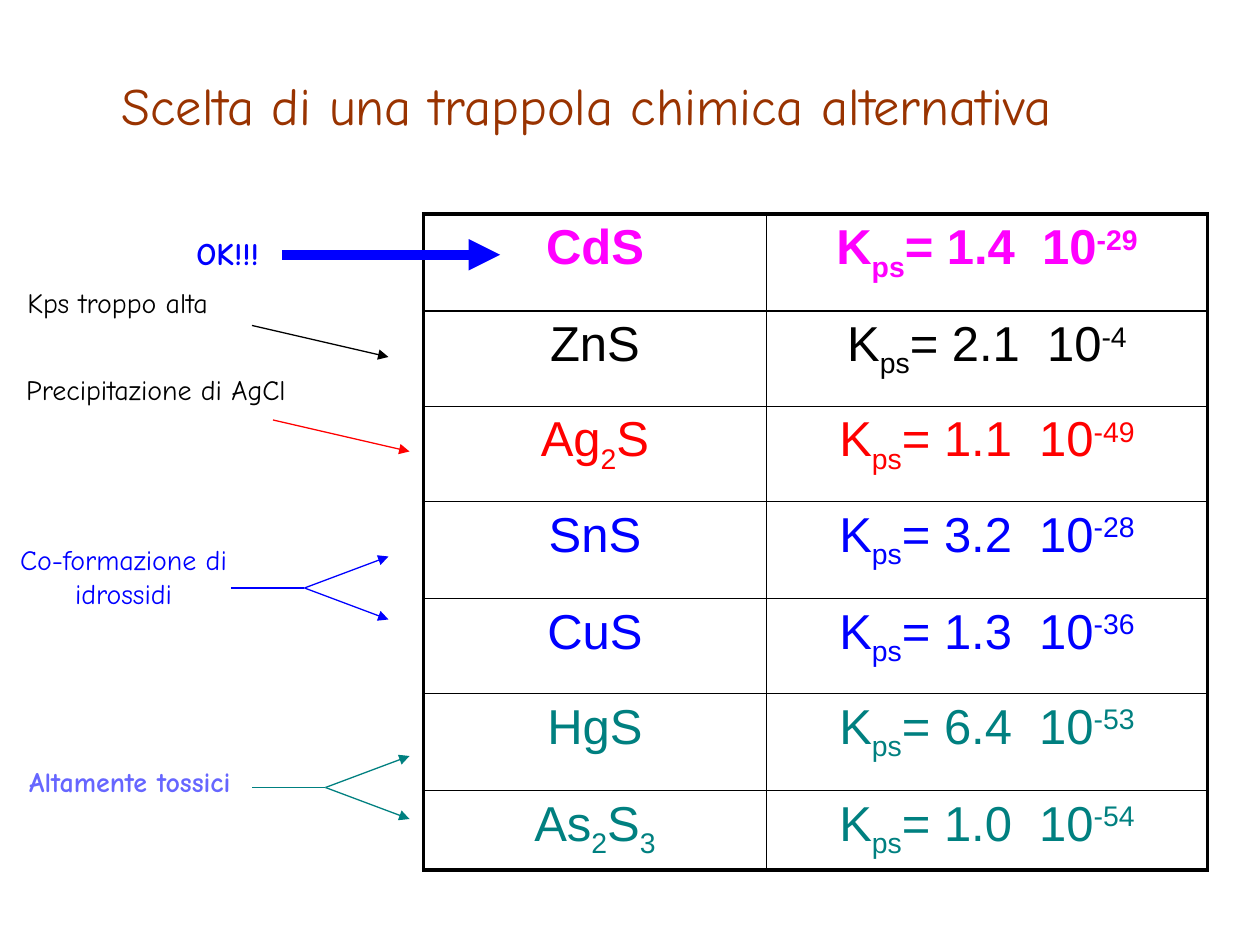
from lxml import etree
from pptx import Presentation
from pptx.dml.color import RGBColor
from pptx.enum.shapes import MSO_CONNECTOR as Link
from pptx.enum.text import MSO_ANCHOR as Anchor, MSO_AUTO_SIZE as Auto, PP_ALIGN as Align
from pptx.oxml.ns import qn
from pptx.util import Pt

BLACK = RGBColor(0x00, 0x00, 0x00)
BROWN = RGBColor(0x99, 0x33, 0x00)
PINK = RGBColor(0xFF, 0x00, 0xFF)
RED = RGBColor(0xFF, 0x00, 0x00)
BLUE = RGBColor(0x00, 0x00, 0xFF)
TEAL = RGBColor(0x00, 0x80, 0x80)
LILAC = RGBColor(0x66, 0x66, 0xFF)
HAND = "Comic Neue"


def write(par, parts, color, align, **style):
    par.alignment = align
    for text, base in parts:
        run = par.add_run()
        run.text = text
        for key, value in style.items():
            setattr(run.font, key, value)
        run.font.color.rgb = color
        if base:
            run._r.get_or_add_rPr().set("baseline", str(base * 1000))


def draw(start, end, color, width=0.75, arrow=True):
    line = slide.shapes.add_connector(Link.STRAIGHT, *map(Pt, start + end))
    line.line.color.rgb = color
    line.line.width = Pt(width)
    if arrow:
        etree.SubElement(line.line._get_or_add_ln(), qn("a:tailEnd"), type="triangle")
    etree.SubElement(line._element.spPr, qn("a:effectLst"))


deck = Presentation()
deck.slide_width, deck.slide_height = Pt(720), Pt(540)
slide = deck.slides.add_slide(deck.slide_layouts[5])

title = slide.shapes.title
place = {"left": 52.5, "top": 37.5, "width": 631.5, "height": 44}
for key, value in place.items():
    setattr(title, key, Pt(value))
frame = title.text_frame
form = {"auto_size": Auto.NONE, "word_wrap": True,
        "vertical_anchor": Anchor.MIDDLE, "margin_left": Pt(17)}
for key, value in form.items():
    setattr(frame, key, value)
write(frame.paragraphs[0], [("Scelta di una trappola chimica alternativa", 0)],
      BROWN, Align.LEFT, size=Pt(30), name=HAND, bold=False)

salts = [
    ("CdS", "1.4", "-29", PINK),
    ("ZnS", "2.1", "-4", BLACK),
    ("Ag_2_S", "1.1", "-49", RED),
    ("SnS", "3.2", "-28", BLUE),
    ("CuS", "1.3", "-36", BLUE),
    ("HgS", "6.4", "-53", TEAL),
    ("As_2_S_3", "1.0", "-54", TEAL),
]
wide = [196, 252]
high = [55.4, 54.4, 54.4, 55.4, 54.4, 55.4, 45.4]
last = len(salts) - 1
table = slide.shapes.add_table(len(salts), 2, Pt(242), Pt(122.4),
                               Pt(sum(wide)), Pt(sum(high))).table
table.first_row = table.horz_banding = False
for col, size in zip(table.columns, wide):
    col.width = Pt(size)
for row, size in zip(table.rows, high):
    row.height = Pt(size)

for r, (salt, value, power, color) in enumerate(salts):
    name = [(part, -25 if i % 2 else 0)
            for i, part in enumerate(salt.split("_")) if part]
    kps = [("K", 0), ("ps", -25), (f"= {value}  10", 0), (power, 30)]
    for c, parts in enumerate((name, kps)):
        cell = table.cell(r, c)
        par = cell.text_frame.paragraphs[0]
        par.space_before = Pt(5.6)
        write(par, parts, color, Align.CENTER, size=Pt(28), name="Arial", bold=r == 0)
        outer = {"lnL": c == 0, "lnR": c == 1, "lnT": r == 0, "lnB": r == last}
        props = cell._tc.get_or_add_tcPr()
        for tag, edge in outer.items():
            side = etree.SubElement(props, qn(f"a:{tag}"), w=str(Pt(2.25 if edge else 1)))
            fill = etree.SubElement(side, qn("a:solidFill"))
            etree.SubElement(fill, qn("a:srgbClr"), val=str(BLACK))
        cell.fill.background()

notes = [
    ("Kps troppo alta", 8.6, 159.8, 129, 26.6, BLACK, 16, False, False),
    ("Precipitazione di AgCl", 7.9, 209.5, 178.6, 26.6, BLACK, 16, False, False),
    ("Co-formazione di idrossidi", -4.3, 306.7, 149.8, 46, BLUE, 16, False, True),
    ("Altamente tossici", -0.7, 433.4, 149.8, 26.6, LILAC, 16, True, True),
    ("OK!!!", 105.1, 130.3, 53.3, 28.8, BLUE, 18, True, False),
]
for text, x, y, w, h, color, size, bold, wrap in notes:
    frame = slide.shapes.add_textbox(Pt(x), Pt(y), Pt(w), Pt(h)).text_frame
    frame.word_wrap = wrap
    write(frame.paragraphs[0], [(text, 0)], color,
          Align.CENTER if wrap else Align.LEFT, size=Pt(size), name=HAND, bold=bold)

draw((161.3, 145.6), (285.8, 145.6), BLUE, 6)
for x, y, color in ((144, 186, BLACK), (156, 240, RED)):
    draw((x, y), (x + 78, y + 18), color)
for x, y, color in ((132, 336, BLUE), (144, 450, TEAL)):
    fork = (x + 42, y)
    draw((x, y), fork, color, arrow=False)
    for rise in (-18, 18):
        draw(fork, (x + 90, y + rise), color)

deck.save("out.pptx")
